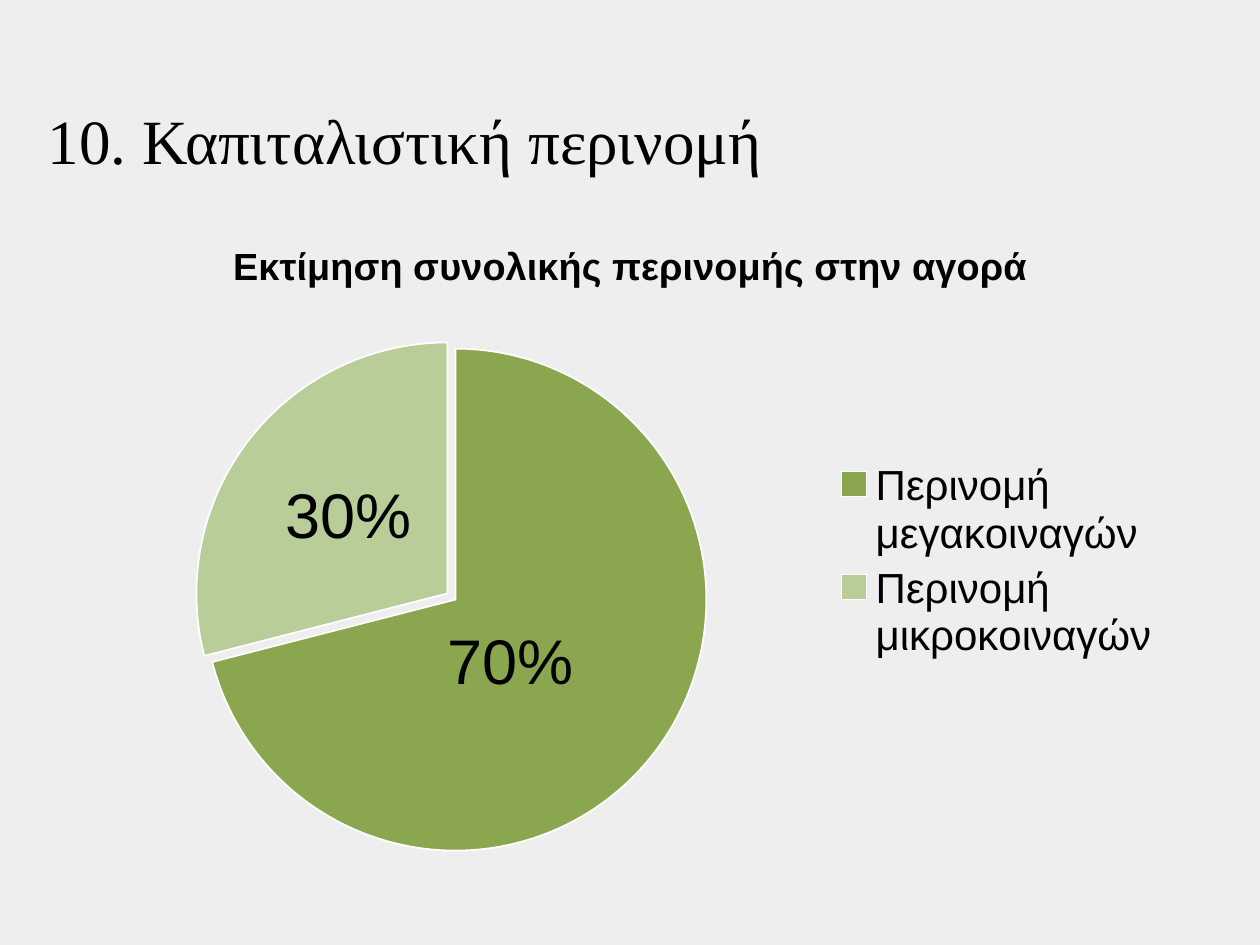
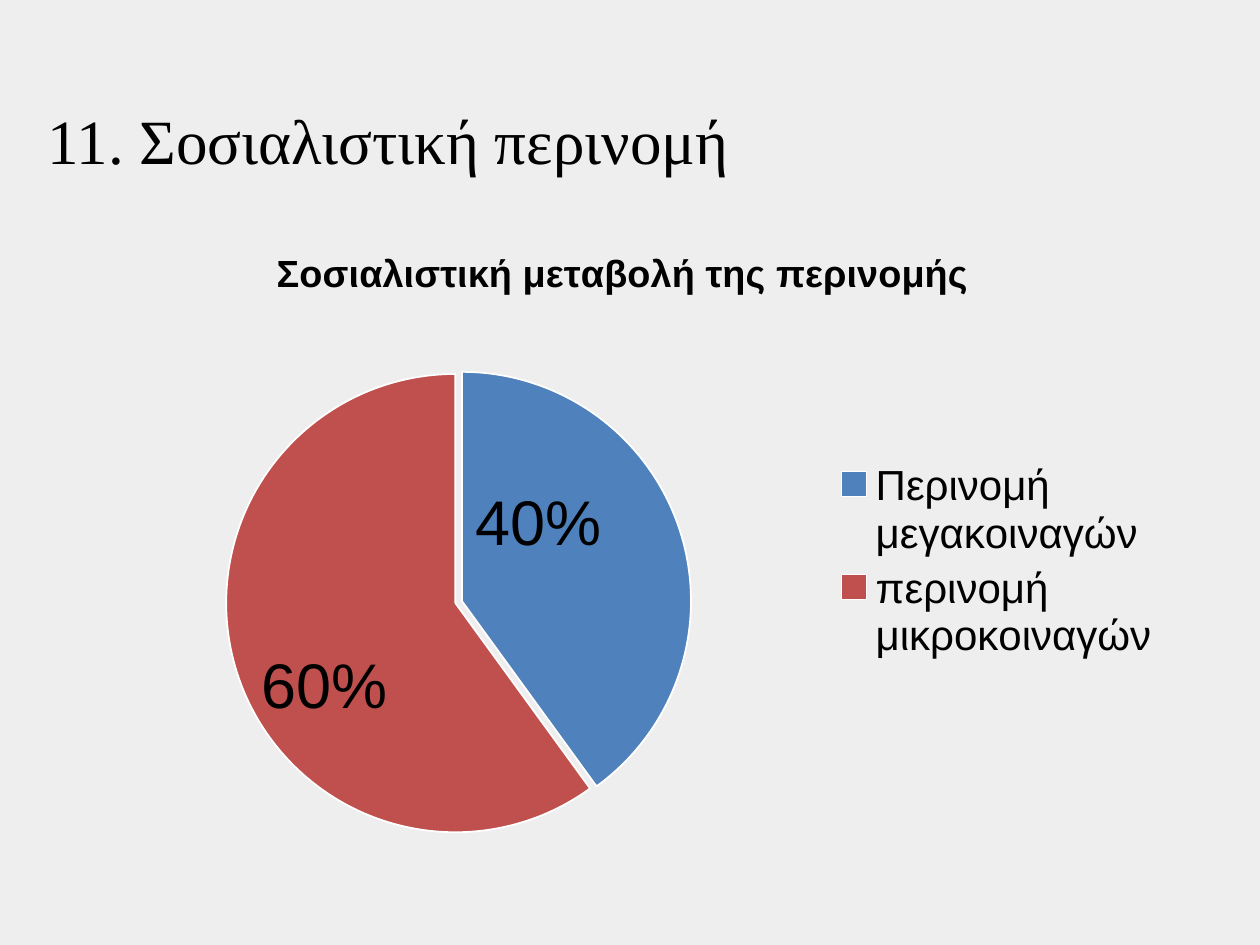
from dataclasses import dataclass

from lxml import etree
from pptx import Presentation
from pptx.chart.data import CategoryChartData
from pptx.dml.color import RGBColor
from pptx.enum.chart import XL_CHART_TYPE, XL_LABEL_POSITION, XL_LEGEND_POSITION
from pptx.enum.text import MSO_ANCHOR
from pptx.oxml.ns import qn
from pptx.util import Cm, Pt

PIE = XL_CHART_TYPE.PIE
LEGEND_RIGHT = XL_LEGEND_POSITION.RIGHT
LABEL_CENTER = XL_LABEL_POSITION.CENTER
BOTTOM = MSO_ANCHOR.BOTTOM


@dataclass(frozen=True)
class Theme:
    background: str = "EEEEEE"
    text: str = "000000"
    slice_edge: str = "FFFFFF"
    greens: tuple = ("8AA64F", "B8CD97")
    blue_red: tuple = ("4F81BD", "C0504D")
    title_font: str = "Times New Roman"
    chart_font: str = "Arial"
    title_size: float = 36
    chart_size: float = 18
    chart_title_size: float = 21.6
    legend_size: float = 24
    label_size: float = 36


THEME = Theme()


@dataclass
class PieSpec:
    title: str
    categories: tuple
    values: tuple
    colors: tuple
    title_at: tuple
    plot_box: tuple
    label_shifts: tuple
    exploded: int
    explosion: int
    label_texts: tuple = (None, None)


def add_value(parent, tag, value):
    etree.SubElement(parent, qn(tag)).set("val", str(value))


def set_layout(parent, index, x, y, w=None, h=None):
    """Place a chart part by fractions of the chart; a size marks the plot area."""
    for old in parent.findall(qn("c:layout")):
        parent.remove(old)
    layout = etree.Element(qn("c:layout"))
    manual = etree.SubElement(layout, qn("c:manualLayout"))
    if w is not None:
        add_value(manual, "c:layoutTarget", "inner")
    if index == 0 or parent.tag == qn("c:title"):
        add_value(manual, "c:xMode", "edge")
        add_value(manual, "c:yMode", "edge")
    for tag, value in (("c:x", x), ("c:y", y), ("c:w", w), ("c:h", h)):
        if value is not None:
            add_value(manual, tag, value)
    parent.insert(index, layout)


class Deck:
    def __init__(self, theme):
        self.theme = theme
        self.prs = Presentation()
        self.prs.slide_width, self.prs.slide_height = Cm(25.4), Cm(19.05)
        self.slide = None

    def style(self, font, name, size, bold=False):
        font.name, font.size, font.bold = name, Pt(size), bold
        font.color.rgb = RGBColor.from_string(self.theme.text)

    def add_slide(self, title):
        self.slide = self.prs.slides.add_slide(self.prs.slide_layouts[6])
        fill = self.slide.background.fill
        fill.solid()
        fill.fore_color.rgb = RGBColor.from_string(self.theme.background)
        self.add_title(title)

    def add_title(self, text):
        sp = self.slide.shapes.add_textbox(Cm(0.71), Cm(0.91), Cm(24), Cm(2.79))
        tf = sp.text_frame
        tf.word_wrap = True
        tf.vertical_anchor = BOTTOM
        r = tf.paragraphs[0].add_run()
        r.text = text
        self.style(r.font, self.theme.title_font, self.theme.title_size)

    def add_pie(self, pie):
        theme = self.theme
        data = CategoryChartData()
        data.categories = pie.categories
        data.add_series("Series 1", pie.values)
        chart = self.slide.shapes.add_chart(
            PIE, Cm(1.7), Cm(4.32), Cm(22), Cm(14), data).chart
        self.style(chart.font, theme.chart_font, theme.chart_size)

        chart.has_title = True
        r = chart.chart_title.text_frame.paragraphs[0].add_run()
        r.text = pie.title
        self.style(r.font, theme.chart_font, theme.chart_title_size, bold=True)
        chart.chart_title.include_in_layout = False

        chart.has_legend = True
        chart.legend.position = LEGEND_RIGHT
        chart.legend.include_in_layout = False
        self.style(chart.legend.font, theme.chart_font, theme.legend_size)

        self.add_slices(chart.plots[0], pie)
        self.arrange_pie(chart.element, pie)

    def add_slices(self, plot, pie):
        theme = self.theme
        plot.vary_by_categories = True
        plot.has_data_labels = True
        labels = plot.data_labels
        labels.show_percentage, labels.show_value = True, False
        labels.number_format, labels.number_format_is_linked = "0%", False
        self.style(labels.font, theme.chart_font, theme.label_size)
        for i, (color, text) in enumerate(zip(pie.colors, pie.label_texts)):
            point = plot.series[0].points[i]
            point.format.fill.solid()
            point.format.fill.fore_color.rgb = RGBColor.from_string(color)
            point.format.line.color.rgb = RGBColor.from_string(theme.slice_edge)
            point.format.line.width = Pt(1)
            label = point.data_label
            if text:
                r = label.text_frame.paragraphs[0].add_run()
                r.text = text
                font = r.font
            else:
                font = label.font
            self.style(font, theme.chart_font, theme.label_size)
            label.position = LABEL_CENTER

    def arrange_pie(self, root, pie):
        """Set places and the pulled-out slice, and let slice labels show percent."""
        set_layout(root.xpath(".//c:plotArea")[0], 0, *pie.plot_box)
        set_layout(root.xpath("./c:chart/c:title")[0], 1, *pie.title_at)
        for label, shift in zip(root.xpath(".//c:dLbl"), pie.label_shifts):
            set_layout(label, 1, *shift)
            label.find(qn("c:showVal")).set("val", "0")
            label.find(qn("c:showPercent")).set("val", "1")
        explosion = etree.Element(qn("c:explosion"))
        explosion.set("val", str(pie.explosion))
        slice_point = root.xpath(".//c:dPt")[pie.exploded]
        slice_point.find(qn("c:spPr")).addprevious(explosion)


SLIDES = {
    "10. Καπιταλιστική περινομή": PieSpec(
        title="Εκτίμηση συνολικής περινομής στην αγορά",
        categories=("Περινομή μεγακοιναγών", "Περινομή μικροκοιναγών"),
        values=(71, 29),
        colors=THEME.greens,
        title_at=(0.13, 0.03),
        plot_box=(0.11, 0.19, 0.46, 0.73),
        label_shifts=((-0.04, -0.02), (0, 0)),
        exploded=1,
        explosion=4,
        label_texts=("70%", "30%"),
    ),
    "11. Σοσιαλιστική περινομή": PieSpec(
        title="Σοσιαλιστική μεταβολή της περινομής",
        categories=("Περινομή μεγακοιναγών", "περινομή μικροκοιναγών"),
        values=(40, 60),
        colors=THEME.blue_red,
        title_at=(0.17, 0.04),
        plot_box=(0.13, 0.23, 0.42, 0.66),
        label_shifts=((-0.03, -0.06), (-0.02, 0.07)),
        exploded=0,
        explosion=3,
    ),
}


def main():
    deck = Deck(THEME)
    for title, pie in SLIDES.items():
        deck.add_slide(title)
        deck.add_pie(pie)
    deck.prs.save("out.pptx")


if __name__ == "__main__":
    main()
